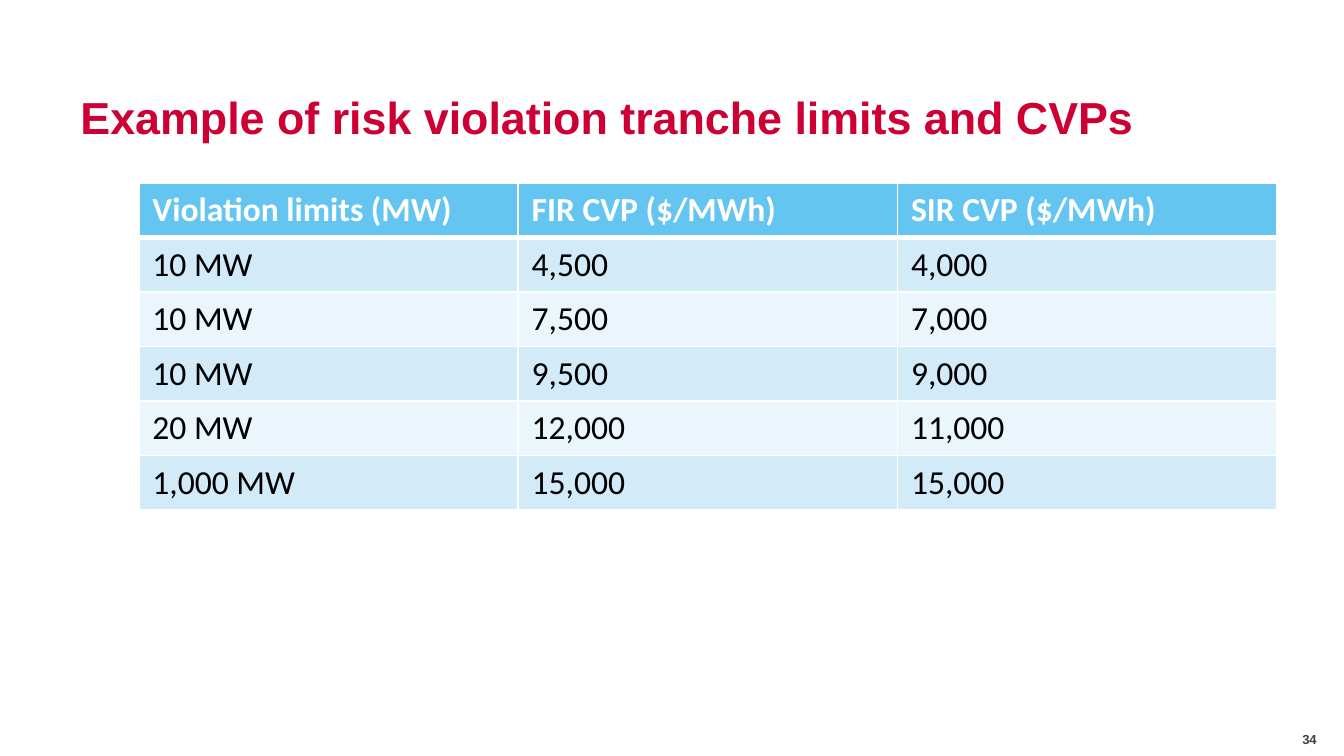
from lxml import etree
from pptx import Presentation
from pptx.dml.color import RGBColor
from pptx.enum.text import MSO_ANCHOR, MSO_AUTO_SIZE, PP_ALIGN
from pptx.oxml.ns import qn
from pptx.util import Emu, Pt

MIDDLE = MSO_ANCHOR.MIDDLE
FIXED = MSO_AUTO_SIZE.NONE
LEFT = PP_ALIGN.LEFT
SCALE = 914400 / 134.4
WHITE = "FFFFFF"
ROWS = [
    ("Violation limits (MW)", "FIR CVP ($/MWh)", "SIR CVP ($/MWh)"),
    ("10 MW", "4,500", "4,000"),
    ("10 MW", "7,500", "7,000"),
    ("10 MW", "9,500", "9,000"),
    ("20 MW", "12,000", "11,000"),
    ("1,000 MW", "15,000", "15,000"),
]


def px(count):
    return Emu(round(count * SCALE))


def color(code):
    return RGBColor.from_string(code)


def style(frame, size, face, code, bold):
    for para in frame.paragraphs:
        para.alignment = LEFT
        for run in para.runs:
            font = run.font
            font.size, font.name, font.bold = Pt(size), face, bold
            font.color.rgb = color(code)


def add_borders(cell, base):
    props = cell._tc.get_or_add_tcPr()
    widths = {"lnL": 1, "lnR": 1, "lnT": 1, "lnB": base}
    for spot, (tag, width) in enumerate(widths.items()):
        line = etree.Element(qn(f"a:{tag}"), w=str(Pt(width)))
        fill = etree.SubElement(line, qn("a:solidFill"))
        etree.SubElement(fill, qn("a:srgbClr"), val=WHITE)
        props.insert(spot, line)


def add_title(slide, left, top, width, height):
    title = slide.shapes.title
    title.left, title.top = px(left), px(top)
    title.width, title.height = px(width), px(height)
    frame = title.text_frame
    frame.text = "Example of risk violation tranche limits and CVPs"
    frame.auto_size = FIXED
    frame.word_wrap = True
    frame.vertical_anchor = MIDDLE
    frame.paragraphs[0].line_spacing = Pt(40)
    style(frame, 24, "Arial", "CD0034", True)


def add_limits(slide, left, top, width, height):
    box = [px(side) for side in (left, top, width, height)]
    table = slide.shapes.add_table(len(ROWS), len(ROWS[0]), *box).table
    for row, texts in enumerate(ROWS):
        head = row == 0
        fill = "63C5F0" if head else ("EAF5FC", "D3EAF9")[row % 2]
        for col, text in enumerate(texts):
            cell = table.cell(row, col)
            cell.text_frame.text = text
            cell.fill.solid()
            cell.fill.fore_color.rgb = color(fill)
            style(cell.text_frame, 18, "Calibri", WHITE if head else "000000", head)
            add_borders(cell, 3 if head else 1)


def add_number(slide, left, top, width, height):
    box = slide.shapes.add_textbox(px(left), px(top), px(width), px(height))
    frame = box.text_frame
    frame.text = "34"
    frame.word_wrap = True
    frame.vertical_anchor = MIDDLE
    style(frame, 7, "Arial", "404040", True)


def main():
    deck = Presentation()
    deck.slide_width, deck.slide_height = px(1344), px(756)
    slide = deck.slides.add_slide(deck.slide_layouts[5])
    add_limits(slide, 139, 183, 1138, 327)
    add_number(slide, 1289, 724, 55, 31)
    add_title(slide, 67, 46, 1210, 121)
    deck.save("out.pptx")


if __name__ == "__main__":
    main()
